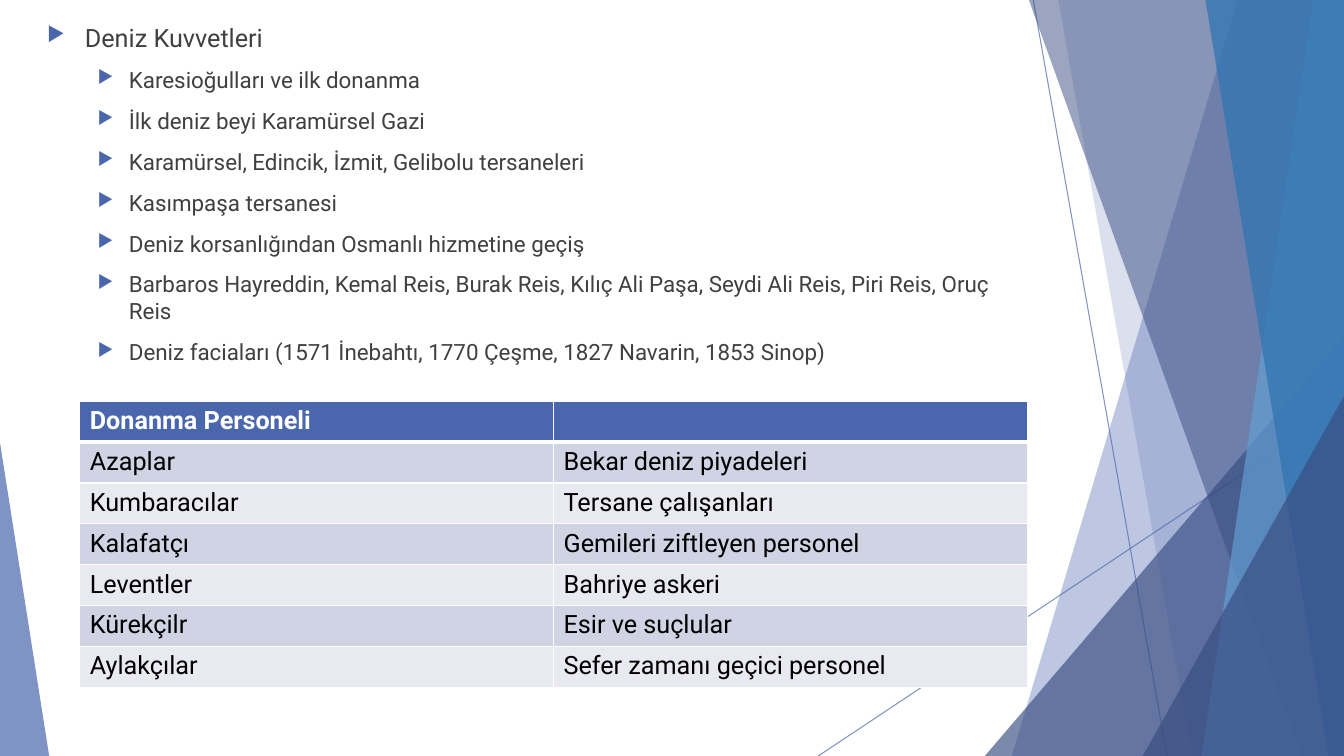
from lxml import etree
from pptx import Presentation
from pptx.dml.color import RGBColor
from pptx.enum import shapes as kinds, text as txt
from pptx.oxml.ns import qn
from pptx.util import Cm, Pt

COLORS = {"blue": "4A66AC", "navy": "384C81", "sky": "629DD1", "ocean": "3477B2",
          "gray": "404040", "white": "FFFFFF", "black": "000000",
          "band_dark": "D0D3E3", "band_light": "E9EAF1"}
FONT = "Roboto"
WIDTH, HEIGHT = 33.87, 19.05

TITLE = "Deniz Kuvvetleri"
TOPICS = [
    "Karesioğulları ve ilk donanma",
    "İlk deniz beyi Karamürsel Gazi",
    "Karamürsel, Edincik, İzmit, Gelibolu tersaneleri",
    "Kasımpaşa tersanesi",
    "Deniz korsanlığından Osmanlı hizmetine geçiş",
    "Barbaros Hayreddin, Kemal Reis, Burak Reis, Kılıç Ali Paşa, Seydi Ali Reis, "
    "Piri Reis, Oruç Reis",
    "Deniz faciaları (1571 İnebahtı, 1770 Çeşme, 1827 Navarin, 1853 Sinop)",
]
PERSONNEL = [
    ("Donanma Personeli", ""),
    ("Azaplar", "Bekar deniz piyadeleri"),
    ("Kumbaracılar", "Tersane çalışanları"),
    ("Kalafatçı", "Gemileri ziftleyen personel"),
    ("Leventler", "Bahriye askeri"),
    ("Kürekçilr", "Esir ve suçlular"),
    ("Aylakçılar", "Sefer zamanı geçici personel"),
]

# Lengths in cm, from back to front
RAYS = [(26.04, 0, 29.41, HEIGHT), (WIDTH, 10.24, 20.62, HEIGHT)]
# band: x at top, x at bottom; triangle: left, top, width, apex position
FACETS = [
    ("band", (31.19, 25.5), "blue", 36),
    ("band", (26.67, 30.05), "blue", 20),
    ("triangle", (24.82, 8.46, 9.05, 1), "navy", 66),
    ("band", (25.93, 32.79), "navy", 50),
    ("band", (33.1, 30.28), "sky", 70),
    ("band", (30.38, 33.48), "ocean", 80),
    ("triangle", (28.8, 9.98, 5.07, 1), "navy", 66),
    ("triangle", (0, 11.15, 1.24, 0), "blue", 70),
]
LEVELS = [{"size": 18, "left": 0.95, "hang": 0.95},
          {"size": 16, "left": 2.06, "hang": 0.79}]


def rgb(name):
    return RGBColor.from_string(COLORS[name])


def add_xml(parent, tag, **attributes):
    return etree.SubElement(parent, qn(tag), attributes)


def set_alpha(part, percent):
    for color in part._element.spPr.iter(qn("a:srgbClr")):
        add_xml(color, "a:alpha", val=str(percent * 1000))


def style_font(font, size, color, bold=False):
    values = {"name": FONT, "size": Pt(size), "bold": bold}
    for key, value in values.items():
        setattr(font, key, value)
    font.color.rgb = rgb(color)


def draw_ray(slide, ends):
    ray = slide.shapes.add_connector(kinds.MSO_CONNECTOR.STRAIGHT, *map(Cm, ends))
    ray.line.color.rgb = rgb("blue")
    ray.line.width = Pt(0.75)
    set_alpha(ray, 70)
    add_xml(ray._element.spPr, "a:effectLst")


def draw_facet(slide, kind, place, color, alpha):
    if kind == "band":
        top_x, bottom_x = place
        outline = slide.shapes.build_freeform(Cm(top_x), 0)
        corners = [(WIDTH, 0), (WIDTH, HEIGHT), (bottom_x, HEIGHT)]
        outline.add_line_segments([(Cm(x), Cm(y)) for x, y in corners])
        facet = outline.convert_to_shape()
    else:
        left, top, width, apex = place
        facet = slide.shapes.add_shape(kinds.MSO_SHAPE.ISOSCELES_TRIANGLE,
                                       *map(Cm, (left, top, width, HEIGHT - top)))
        facet.adjustments[0] = apex
    facet.shadow.inherit = False
    facet.line.fill.background()
    facet.fill.solid()
    facet.fill.fore_color.rgb = rgb(color)
    set_alpha(facet, alpha)


def add_bullet(paragraph, content, level):
    look = LEVELS[level]
    paragraph.level = level
    paragraph.space_before = Pt(10)
    run = paragraph.add_run()
    run.text = content
    style_font(run.font, look["size"], "gray")
    props = paragraph._p.get_or_add_pPr()
    props.set("marL", str(Cm(look["left"])))
    props.set("indent", str(-Cm(look["hang"])))
    add_xml(add_xml(props, "a:buClr"), "a:srgbClr", val=COLORS["blue"])
    add_xml(props, "a:buSzPct", val="80000")
    add_xml(props, "a:buChar", char="▶")


def add_topics(slide):
    frame = slide.shapes.add_textbox(Cm(0.94), Cm(0.43), Cm(24.94), Cm(17.2)).text_frame
    frame.word_wrap = True
    frame.vertical_anchor = txt.MSO_ANCHOR.TOP
    add_bullet(frame.paragraphs[0], TITLE, 0)
    for topic in TOPICS:
        add_bullet(frame.add_paragraph(), topic, 1)


def add_borders(cell, top, bottom):
    """Draw white cell borders; top and bottom are widths in points."""
    props = cell._tc.get_or_add_tcPr()
    sides = {"a:lnL": 1, "a:lnR": 1, "a:lnT": top, "a:lnB": bottom}
    for position, (tag, width) in enumerate(sides.items()):
        border = etree.Element(qn(tag), w=str(Pt(width)))
        add_xml(add_xml(border, "a:solidFill"), "a:srgbClr", val=COLORS["white"])
        props.insert(position, border)


def add_personnel(slide):
    row_count = len(PERSONNEL)
    table = slide.shapes.add_table(row_count, 2, Cm(2.01), Cm(10.11),
                                   Cm(23.88), Cm(1.03 * row_count)).table
    table.horz_banding = False
    for row, entries in enumerate(PERSONNEL):
        header = row == 0
        band = "blue" if header else ("band_light", "band_dark")[row % 2]
        for column, entry in enumerate(entries):
            cell = table.cell(row, column)
            cell.text = entry
            style_font(cell.text_frame.paragraphs[0].font, 18,
                       "white" if header else "black", header)
            for run in cell.text_frame.paragraphs[0].runs:
                style_font(run.font, 18, "white" if header else "black", header)
            cell.fill.solid()
            cell.fill.fore_color.rgb = rgb(band)
            add_borders(cell, 3 if row == 1 else 1, 3 if header else 1)


def main():
    deck = Presentation()
    deck.slide_width, deck.slide_height = Cm(WIDTH), Cm(HEIGHT)
    slide = deck.slides.add_slide(deck.slide_layouts[6])
    for ends in RAYS:
        draw_ray(slide, ends)
    for facet in FACETS:
        draw_facet(slide, *facet)
    add_topics(slide)
    add_personnel(slide)
    deck.save("out.pptx")


if __name__ == "__main__":
    main()
